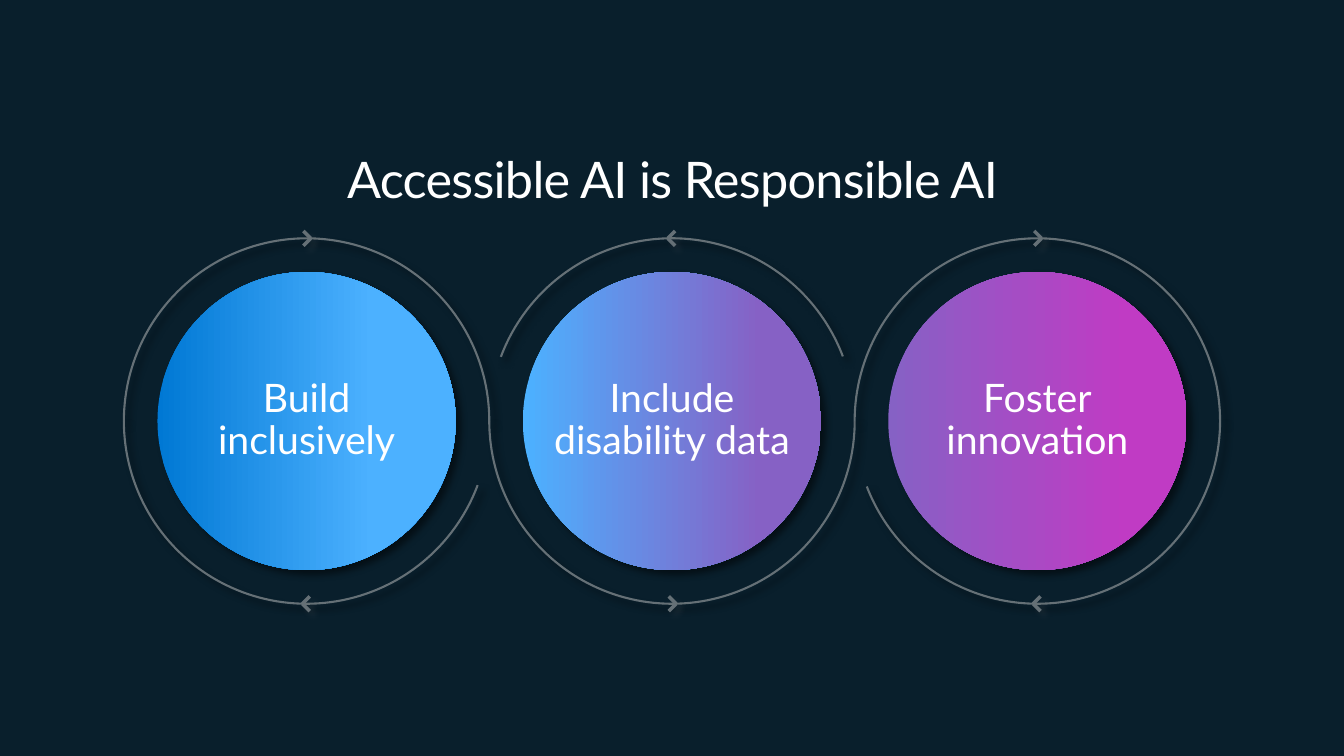
"""Build a slide with a title and three linked, ringed discs."""
from dataclasses import dataclass

from lxml.etree import SubElement
from pptx import Presentation
from pptx.dml.color import RGBColor
from pptx.enum.shapes import MSO_CONNECTOR, MSO_SHAPE
from pptx.enum.text import MSO_ANCHOR, MSO_AUTO_SIZE, PP_ALIGN
from pptx.oxml.ns import qn
from pptx.slide import Slide
from pptx.text.text import TextFrame
from pptx.util import Emu, Pt

FONT = "Lato"
COLORS = {
    "night": "091F2C", "white": "FFFFFF", "ring": "657076",
    "blue": "0078D4", "sky": "4CB1FF", "purple": "8661C5", "pink": "C03BC4",
    "black": "000000", "gray": "737373",
}
LEFT, TOP, RING = 118, 227, 348
INSET = 32
DISC = RING - 2 * INSET
ARM = 7


@dataclass
class Stage:
    """A disc, its two ring arcs in degrees, and the way its top arrow points."""
    text: str
    start: str
    end: str
    stop: float
    upper: tuple[float, float]
    lower: tuple[float, float]
    way: int
    wrap: bool = True


STAGES = [
    Stage("Build inclusively", "blue", "sky", 0.72, (180, 360), (20.55, 180), 1),
    Stage("Include\ndisability data", "sky", "purple", 0.8, (200.55, 339.3), (0, 180), -1, False),
    Stage("Foster\ninnovation", "purple", "pink", 0.8, (180, 360), (0, 159), 1),
]


def px(size: int) -> Emu:
    """Turn px into EMU."""
    return Emu(size * 9525)


def hue(name: str) -> RGBColor:
    """Look up a colour."""
    return RGBColor.from_string(COLORS[name])


def shade(shape, name: str, alpha: int) -> None:
    """Add a soft shadow to the lower right, with alpha in percent."""
    effects = SubElement(shape._element.spPr, qn("a:effectLst"))
    outer = SubElement(effects, qn("a:outerShdw"), blurRad="63500", dist="63500",
                       dir="2700000", algn="ctr", rotWithShape="0")
    color = SubElement(outer, qn("a:srgbClr"), val=COLORS[name])
    SubElement(color, qn("a:alpha"), val=str(alpha * 1000))


def write(frame: TextFrame, text: str, size: int, pitch: float) -> None:
    """Set centred white text."""
    frame.text = text
    frame.vertical_anchor = MSO_ANCHOR.MIDDLE
    for para in frame.paragraphs:
        para.alignment = PP_ALIGN.CENTER
        para.line_spacing = pitch
        for run in para.runs:
            run.font.name = FONT
            run.font.size = Pt(size)
            run.font.color.rgb = hue("white")


def add_disc(slide: Slide, stage: Stage, left: int) -> None:
    """Draw the gradient disc with its label."""
    disc = slide.shapes.add_shape(MSO_SHAPE.OVAL, px(left + INSET), px(TOP + INSET),
                                  px(DISC), px(DISC))
    disc.fill.gradient()
    disc.fill.gradient_angle = 0
    stops = disc.fill.gradient_stops
    for stop, name, place in zip(stops, (stage.start, stage.end), (0, stage.stop)):
        stop.color.rgb = hue(name)
        stop.position = place
    disc.line.fill.background()
    shade(disc, "black", 50)
    frame = disc.text_frame
    frame.margin_left = frame.margin_right = frame.margin_top = frame.margin_bottom = 0
    frame.word_wrap = stage.wrap
    write(frame, stage.text, 28, 0.9)


def add_arc(slide: Slide, left: int, span: tuple[float, float]) -> None:
    """Draw one arc of a ring."""
    arc = slide.shapes.add_shape(MSO_SHAPE.ARC, px(left), px(TOP), px(RING), px(RING))
    for index, angle in enumerate(span):
        arc.adjustments[index] = angle % 360 * 0.6
    arc.fill.background()
    arc.line.color.rgb = hue("ring")
    arc.line.width = Pt(1.5)
    shade(arc, "black", 50)


def add_head(slide: Slide, mid: int, level: int, way: int) -> None:
    """Draw an open arrowhead as a group of two strokes."""
    group = slide.shapes.add_group_shape()
    tip = mid + 4 * way
    for side in (-1, 1):
        stroke = group.shapes.add_connector(MSO_CONNECTOR.STRAIGHT, px(tip), px(level),
                                            px(tip - ARM * way), px(level + ARM * side))
        stroke.line.color.rgb = hue("ring")
        stroke.line.width = Pt(2.5)
        shade(stroke, "gray", 20)


def add_title(slide: Slide, text: str) -> None:
    """Place and format the title."""
    title = slide.shapes.title
    title.left, title.top, title.width, title.height = px(62), px(140), px(1157), px(59)
    frame = title.text_frame
    frame.word_wrap = True
    frame.auto_size = MSO_AUTO_SIZE.NONE
    write(frame, text, 36, 1.0)
    frame.paragraphs[0].runs[0].font._element.set("spc", "-50")


def main() -> None:
    """Build and save the deck."""
    deck = Presentation()
    deck.slide_width, deck.slide_height = px(1280), px(720)
    slide = deck.slides.add_slide(deck.slide_layouts[5])
    slide.background.fill.solid()
    slide.background.fill.fore_color.rgb = hue("night")
    add_title(slide, "Accessible AI is Responsible AI")
    for index, stage in enumerate(STAGES):
        left = LEFT + index * RING
        add_disc(slide, stage, left)
        for span in (stage.upper, stage.lower):
            add_arc(slide, left, span)
        mid = left + RING // 2
        add_head(slide, mid, TOP, stage.way)
        add_head(slide, mid, TOP + RING, -stage.way)
    deck.save("out.pptx")


if __name__ == "__main__":
    main()
